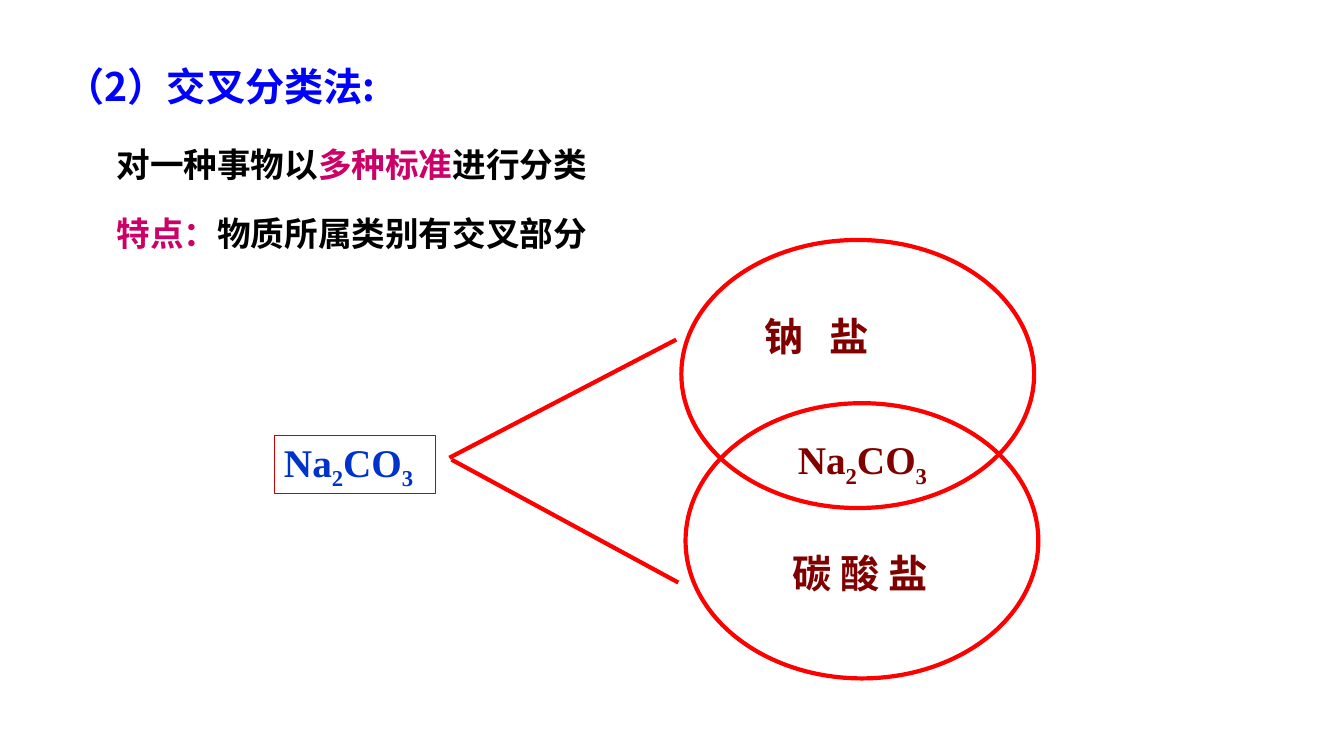
import pptx
import pptx.dml.color
import pptx.enum.shapes
import pptx.enum.text
import pptx.oxml.ns
import pptx.util

Pt = pptx.util.Pt
RGB = pptx.dml.color.RGBColor
Align = pptx.enum.text.PP_ALIGN
Anchor = pptx.enum.text.MSO_ANCHOR

BLUE = RGB(0x00, 0x00, 0xFF)
FORMULA_BLUE = RGB(0x00, 0x33, 0xCC)
RED = RGB(0xFF, 0x00, 0x00)
FRAME_RED = RGB(0xCC, 0x00, 0x00)
MAROON = RGB(0x80, 0x00, 0x00)
MAGENTA = RGB(0xCC, 0x00, 0x66)
BLACK = RGB(0x00, 0x00, 0x00)

CHINESE = "Noto Sans CJK SC"
LATIN = "Times New Roman"
SUBSCRIPT = {"baseline": "-25000"}
WIDE_GAP = {"spc": "1260"}
# Each run: text, colour (None keeps the default), extra run properties
SODIUM_CARBONATE = [("Na", None, {}), ("2", None, SUBSCRIPT),
                    ("CO", None, {}), ("3", None, SUBSCRIPT)]


def set_format(target, values):
    for name, value in values.items():
        setattr(target, name, value)


def place(part, box):
    set_format(part, dict(zip(("left", "top", "width", "height"), map(Pt, box))))


def write(part, paragraphs, size, color, font=CHINESE, align=Align.LEFT,
          anchor=Anchor.MIDDLE, gap=0):
    frame = part.text_frame
    set_format(frame, {
        "word_wrap": True, "auto_size": pptx.enum.text.MSO_AUTO_SIZE.NONE,
        "vertical_anchor": anchor, "margin_left": Pt(7.2), "margin_right": Pt(7.2),
        "margin_top": Pt(3.6), "margin_bottom": Pt(3.6)})
    for index, runs in enumerate(paragraphs):
        paragraph = frame.add_paragraph() if index else frame.paragraphs[0]
        set_format(paragraph, {"alignment": align, "line_spacing": 1.0,
                               "space_before": Pt(gap if index else 0)})
        for text, run_color, extras in runs:
            run = paragraph.add_run()
            run.text = text
            set_format(run.font, {"name": font, "size": Pt(size), "bold": True})
            run.font.color.rgb = run_color or color
            properties = run.font._element
            for name, value in extras.items():
                properties.set(name, value)
            east_asian = properties.makeelement(
                pptx.oxml.ns.qn("a:ea"), {"typeface": font})
            properties.find(pptx.oxml.ns.qn("a:latin")).addnext(east_asian)


def add_outline(slide, kind, box, color, weight):
    outline = slide.shapes.add_shape(kind, *map(Pt, box))
    outline.shadow.inherit = False
    outline.fill.background()
    outline.line.color.rgb = color
    outline.line.width = Pt(weight)
    return outline


def add_label(slide, box, runs, **text_format):
    label = slide.shapes.add_textbox(*map(Pt, box))
    write(label, [runs], 28, MAROON, **text_format)


def add_heading(slide, box):
    place(slide.shapes.title, box)
    write(slide.shapes.title, [[("（2）交叉分类法:", None, {})]], 28, BLUE)


def add_definition(slide, box):
    definition = slide.placeholders[1]
    place(definition, box)
    write(definition, [
        [("对一种事物以", None, {}), ("多种标准", MAGENTA, {}), ("进行分类", None, {})],
        [("特点：", MAGENTA, {}), ("物质所属类别有交叉部分", None, {})],
    ], 24, BLACK, anchor=Anchor.TOP, gap=20)
    # Plain lines without bullets
    for paragraph in definition.text_frame.paragraphs:
        properties = paragraph._p.get_or_add_pPr()
        set_indent = {"marL": "0", "indent": "0"}
        for name, value in set_indent.items():
            properties.set(name, value)
        properties.append(properties.makeelement(pptx.oxml.ns.qn("a:buNone"), {}))


def add_overlapping_classes(slide, box):
    left, top, width, height = box
    oval = pptx.enum.shapes.MSO_SHAPE.OVAL
    # Carbonates below, sodium salts above
    add_outline(slide, oval, (left + 3, top + 116.6, 252, height - 116.6), RED, 3)
    add_outline(slide, oval, (left, top, 252, 191.5), RED, 3)
    add_label(slide, (left + 52, top + 47.5, 130, 42),
              [("钠", None, {}), (" ", None, WIDE_GAP), ("盐", None, {})])
    add_label(slide, (left + 52.5, top + 216.7, 150.5, 42),
              [("碳 酸 盐", None, {})], align=Align.CENTER)
    # Shared member in the overlap
    add_label(slide, (left + 64.8, top + 138.2, 129, 41), SODIUM_CARBONATE,
              font=LATIN, align=Align.CENTER)


def add_substance(slide, box):
    left, top, width, height = box
    substance = add_outline(slide, pptx.enum.shapes.MSO_SHAPE.RECTANGLE,
                            box, FRAME_RED, 0.75)
    write(substance, [SODIUM_CARBONATE], 28, FORMULA_BLUE, font=LATIN)
    # Branches to the two classes
    for start_x, start_y, rise in ((125.2, 16, -84.4), (126.7, 17.3, 87.8)):
        x, y = left + start_x, top + start_y
        branch = slide.shapes.add_connector(
            pptx.enum.shapes.MSO_CONNECTOR.STRAIGHT,
            Pt(x), Pt(y), Pt(x + 162), Pt(y + rise))
        branch.line.color.rgb = RED
        branch.line.width = Pt(3)
        properties = branch._element.spPr
        properties.append(properties.makeelement(pptx.oxml.ns.qn("a:effectLst"), {}))


def main():
    deck = pptx.Presentation()
    set_format(deck, {"slide_width": Pt(960), "slide_height": Pt(540)})
    slide = deck.slides.add_slide(deck.slide_layouts[1])
    add_heading(slide, (39.6, 41, 324, 41))
    add_definition(slide, (76, 99.5, 468, 100))
    add_overlapping_classes(slide, (486.7, 171.4, 255, 313.2))
    add_substance(slide, (195.8, 311, 115.2, 41.8))
    deck.save("out.pptx")


if __name__ == "__main__":
    main()
